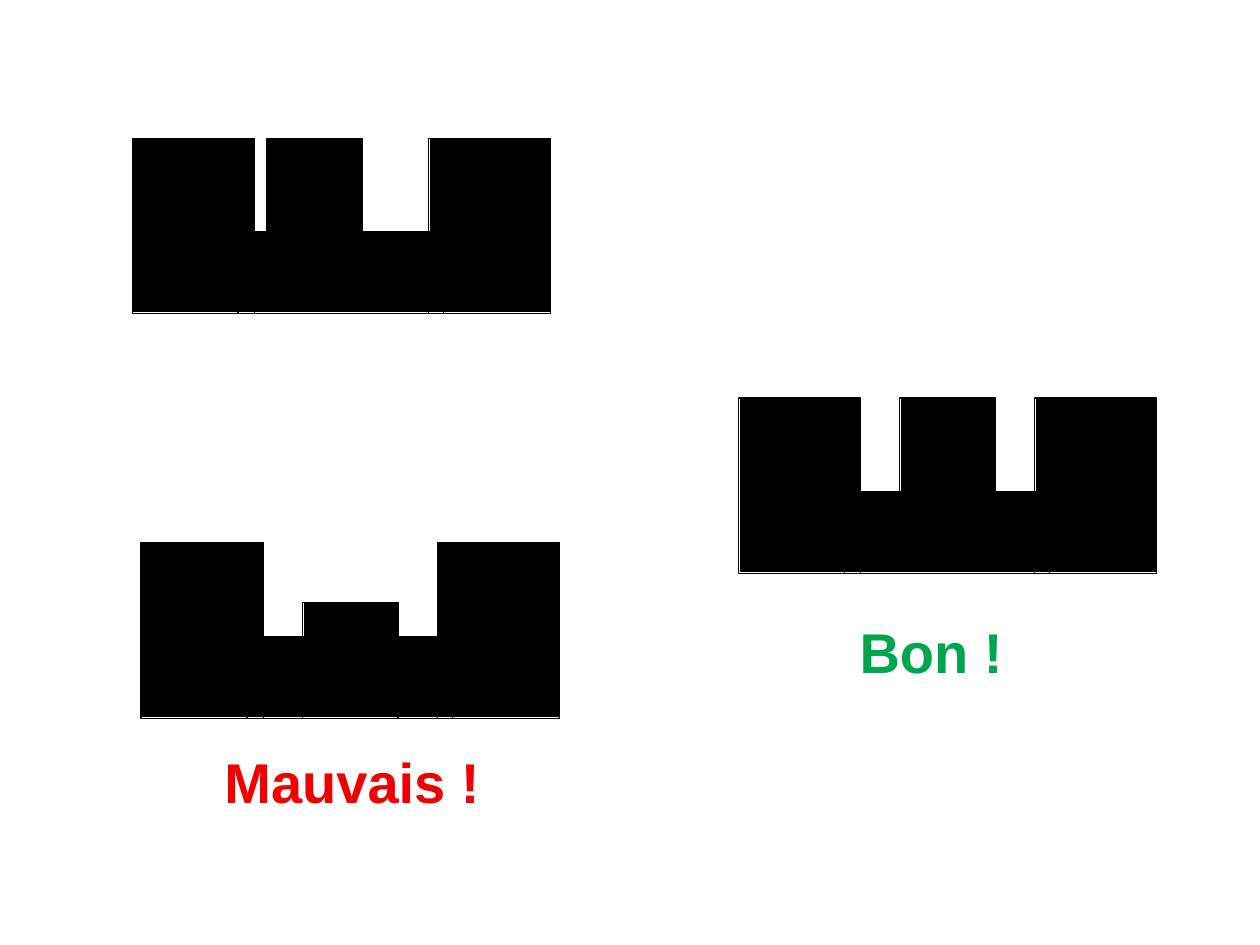
"""Build a slide comparing two bad comb profiles with a good one."""
import pptx
import pptx.dml.color
import pptx.enum.text
import pptx.util

Inches = pptx.util.Inches
BLACK = pptx.dml.color.RGBColor(0x00, 0x00, 0x00)
RED = pptx.dml.color.RGBColor(0xF1, 0x00, 0x00)
GREEN = pptx.dml.color.RGBColor(0x00, 0xA6, 0x4B)

# left, top, middle tooth offset across and down
PROFILES = [
    (5.87, 3.16, 1.28, 0),
    (1.06, 1.10, 1.07, 0),
    (1.13, 4.31, 1.28, 0.47),
]
WALL = (0.96, 1.38)
BASE = (1.62, 0.64)
TOOTH = (0.75, 0.91)
BASE_OFFSET = (0.84, 0.74)
RIGHT_WALL_OFFSET = (2.35, 0)
EDGE = 0.01

VERDICTS = [
    ("Mauvais !", RED, (1.14, 5.88, 3.31, 0.63)),
    ("Bon !", GREEN, (5.68, 4.85, 3.42, 0.63)),
]


def add_outline(slide, left, top, width, height):
    right, bottom = left + width, top + height
    corners = [(left, bottom), (right, bottom), (right, top)]
    builder = slide.shapes.build_freeform(Inches(left), Inches(top))
    builder.add_line_segments([(Inches(x), Inches(y)) for x, y in corners])
    outline = builder.convert_to_shape()
    outline.shadow.inherit = False
    return outline


def add_block(slide, left, top, width, height):
    body = add_outline(slide, left, top, width, height)
    body.fill.solid()
    body.fill.fore_color.rgb = BLACK
    body.line.fill.background()
    border = add_outline(slide, left - EDGE, top, width + EDGE, height + EDGE)
    border.fill.background()
    border.line.color.rgb = BLACK
    border.line.width = pptx.util.Pt(0.75)


def add_profile(slide, left, top, tooth_x, tooth_y):
    blocks = [
        ((0, 0), WALL),
        (BASE_OFFSET, BASE),
        (RIGHT_WALL_OFFSET, WALL),
        ((tooth_x, tooth_y), TOOTH),
    ]
    for (x, y), size in blocks:
        add_block(slide, left + x, top + y, *size)


def add_verdict(slide, wording, color, box):
    verdict = slide.shapes.add_textbox(*map(Inches, box)).text_frame
    verdict.word_wrap = True
    paragraph = verdict.paragraphs[0]
    paragraph.text = wording
    paragraph.alignment = pptx.enum.text.PP_ALIGN.CENTER
    paragraph.font.name = "Arial"
    paragraph.font.size = pptx.util.Pt(32)
    paragraph.font.bold = True
    paragraph.font.color.rgb = color


def main():
    deck = pptx.Presentation()
    deck.slide_width, deck.slide_height = Inches(10), Inches(7.5)
    slide = deck.slides.add_slide(deck.slide_layouts[6])
    for profile in PROFILES:
        add_profile(slide, *profile)
    for verdict in VERDICTS:
        add_verdict(slide, *verdict)
    deck.save("out.pptx")


if __name__ == "__main__":
    main()
